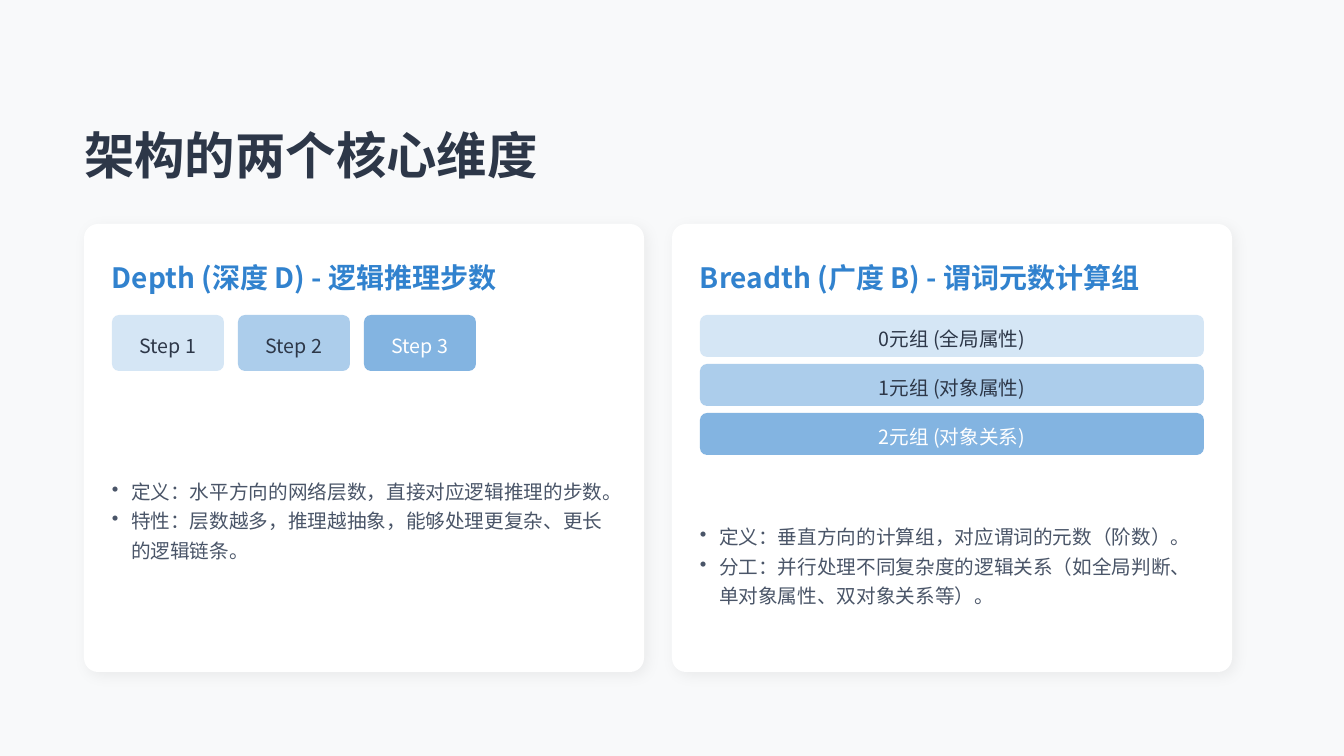
import pptx
import pptx.dml.color
import pptx.enum.shapes
import pptx.enum.text
import pptx.oxml
import pptx.oxml.ns
import pptx.util
import lxml.etree

FONT = "Noto Sans CJK SC"
COLORS = {
    "page": "F8F9FA",
    "card": "FFFFFF",
    "ink": "2D3748",
    "accent": "3182CE",
    "body": "4A5568",
    "light": "FFFFFF",
    "shadow": "000000",
}
ALIGN = pptx.enum.text.PP_ALIGN
qn = pptx.oxml.ns.qn

deck = pptx.Presentation()
deck.slide_width = pptx.util.Inches(13.333)
deck.slide_height = pptx.util.Inches(7.5)
UNIT = deck.slide_width / 96


def write(frame, text, size=14, color="body", bold=False, align=ALIGN.LEFT, bullet=None):
    frame.word_wrap = True
    frame.auto_size = pptx.enum.text.MSO_AUTO_SIZE.NONE
    frame.vertical_anchor = pptx.enum.text.MSO_ANCHOR.MIDDLE
    frame.margin_left = frame.margin_right = frame.margin_top = frame.margin_bottom = 0
    frame.text = text
    for paragraph in frame.paragraphs:
        paragraph.alignment = align
        paragraph.line_spacing = 1.25
        paragraph.space_before = pptx.util.Pt(0)
        if bullet:
            props = paragraph._p.get_or_add_pPr()
            indent = pptx.util.Inches(0.19)
            props.set("marL", str(indent))
            props.set("indent", str(-indent))
            tint = lxml.etree.SubElement(props, qn("a:buClr"))
            lxml.etree.SubElement(tint, qn("a:srgbClr"), val=COLORS[color])
            lxml.etree.SubElement(props, qn("a:buChar"), char=bullet)
        for run in paragraph.runs:
            run.font.size = pptx.util.Pt(size)
            run.font.bold = bold
            run.font.color.rgb = pptx.dml.color.RGBColor.from_string(COLORS[color])
            run.font.name = FONT
            lxml.etree.SubElement(run.font._element, qn("a:ea"), typeface=FONT)


def add_panel(cells, radius, color, opacity=100):
    panel = slide.shapes.add_shape(
        pptx.enum.shapes.MSO_SHAPE.ROUNDED_RECTANGLE, *[round(c * UNIT) for c in cells])
    panel.adjustments[0] = radius / min(cells[2:])
    panel.shadow.inherit = False
    panel.line.fill.background()
    panel.fill.solid()
    panel.fill.fore_color.rgb = pptx.dml.color.RGBColor.from_string(COLORS[color])
    if opacity < 100:
        tone = panel._element.spPr.find(qn("a:solidFill")).find(qn("a:srgbClr"))
        lxml.etree.SubElement(tone, qn("a:alpha"), val=str(opacity * 1000))
    return panel


slide = deck.slides.add_slide(deck.slide_layouts[5])
slide.background.fill.solid()
slide.background.fill.fore_color.rgb = pptx.dml.color.RGBColor.from_string(COLORS["page"])

title = slide.shapes.title
title.left, title.top, title.width, title.height = [round(c * UNIT) for c in (6, 8, 84, 5)]
write(title.text_frame, "架构的两个核心维度", size=36, color="ink", bold=True)

dimensions = [
    {
        "heading": "Depth (深度 D) - 逻辑推理步数",
        "levels": ["Step 1", "Step 2", "Step 3"],
        "level_size": (8, 4),
        "level_step": (9, 0),
        "points": "定义：水平方向的网络层数，直接对应逻辑推理的步数。\n"
                  "特性：层数越多，推理越抽象，能够处理更复杂、更长的逻辑链条。",
        "points_rows": (28, 18),
    },
    {
        "heading": "Breadth (广度 B) - 谓词元数计算组",
        "levels": ["0元组 (全局属性)", "1元组 (对象属性)", "2元组 (对象关系)"],
        "level_size": (36, 3),
        "level_step": (0, 3.5),
        "points": "定义：垂直方向的计算组，对应谓词的元数（阶数）。\n"
                  "分工：并行处理不同复杂度的逻辑关系（如全局判断、单对象属性、双对象关系等）。",
        "points_rows": (33.5, 13.5),
    },
]

for column, dimension in enumerate(dimensions):
    card_left = 6 + 42 * column
    inner_left = card_left + 2

    card = add_panel((card_left, 16, 40, 32), 1, "card")
    effects = card._element.spPr.find(qn("a:effectLst"))
    glow = lxml.etree.SubElement(
        effects, qn("a:outerShdw"), blurRad=str(pptx.util.Pt(10)), dist=str(pptx.util.Pt(4)),
        dir=str(45 * 60000), algn="bl", rotWithShape="0")
    shade = lxml.etree.SubElement(glow, qn("a:srgbClr"), val=COLORS["shadow"])
    lxml.etree.SubElement(shade, qn("a:alpha"), val="5000")

    heading = slide.shapes.add_textbox(*[round(c * UNIT) for c in (inner_left, 18, 36, 3)])
    write(heading.text_frame, dimension["heading"], size=20, color="accent", bold=True)

    step_x, step_y = dimension["level_step"]
    for index, label in enumerate(dimension["levels"]):
        cells = (inner_left + index * step_x, 22.5 + index * step_y, *dimension["level_size"])
        level = add_panel(cells, 0.5, "accent", opacity=20 * (index + 1))
        write(level.text_frame, label, color="light" if index == 2 else "ink", align=ALIGN.CENTER)

    top, rows = dimension["points_rows"]
    points = slide.shapes.add_textbox(*[round(c * UNIT) for c in (inner_left, top, 36, rows)])
    write(points.text_frame, dimension["points"], bullet="•")

deck.save("out.pptx")
